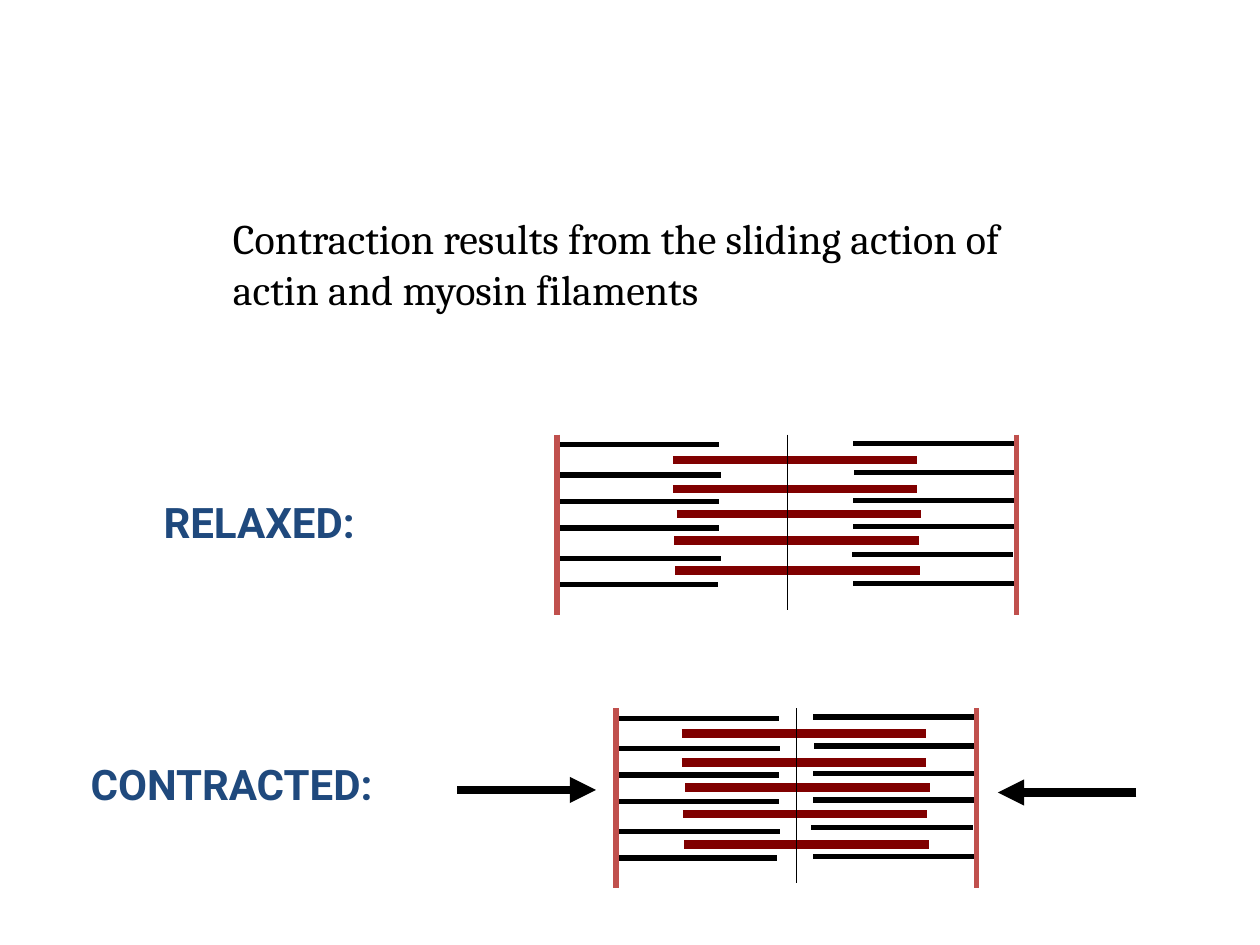
from dataclasses import dataclass

from lxml.etree import SubElement
from pptx import Presentation
from pptx.dml.color import RGBColor
from pptx.enum.shapes import MSO_CONNECTOR
from pptx.enum.text import MSO_AUTO_SIZE
from pptx.oxml.ns import qn
from pptx.util import Inches, Pt

BLACK, DISC_RED, MYOSIN_RED, NAVY = "000000", "C0504D", "800000", "1F497D"
ACTIN_LENGTH, MYOSIN_LENGTH = 1.28, 1.94
DISC_HEIGHT, MIDLINE_HEIGHT = 1.43, 1.39

# Filament offsets: (x from the disc or the midline, y from the top)
LEFT_ACTIN = [(0.01, 0.08), (0.02, 0.32), (0.01, 0.53),
              (0.01, 0.74), (0.02, 0.98), (0, 1.19)]
RIGHT_ACTIN = [(-0.02, 0.07), (-0.01, 0.3), (-0.02, 0.52),
               (-0.02, 0.73), (-0.03, 0.95), (-0.02, 1.18)]
MYOSIN = [(-0.91, 0.2), (-0.91, 0.43), (-0.88, 0.63),
          (-0.9, 0.84), (-0.89, 1.08)]


@dataclass
class Sarcomere:
    left: float
    middle: float
    right: float
    top: float


@dataclass
class Label:
    text: str
    left: float
    top: float
    width: float
    height: float
    font: str
    color: str
    bold: bool = False
    wrap: bool = False


RELAXED = Sarcomere(4.42, 6.25, 8.07, 3.45)
CONTRACTED = Sarcomere(4.89, 6.32, 7.75, 5.62)
LABELS = [
    Label("Contraction results from the sliding action of actin and myosin filaments",
          1.75, 1.64, 6.48, 0.91, "Cambria", BLACK, wrap=True),
    Label("RELAXED:", 1.2, 3.89, 1.9, 0.5, "Roboto", NAVY, bold=True),
    Label("CONTRACTED:", 0.62, 5.97, 2.65, 0.5, "Roboto", NAVY, bold=True),
]


def rgb(color: str) -> RGBColor:
    return RGBColor.from_string(color)


def add_line(s, x1: float, y1: float, x2: float, y2: float,
             color: str, width: float, arrow: bool = False) -> None:
    sp = s.shapes.add_connector(MSO_CONNECTOR.STRAIGHT, Inches(x1), Inches(y1),
                                Inches(x2), Inches(y2))
    sp.line.color.rgb = rgb(color)
    sp.line.width = Pt(width)
    if arrow:
        SubElement(sp.line._get_or_add_ln(), qn("a:tailEnd"), type="triangle")
    SubElement(sp._element.spPr, qn("a:effectLst"))


def add_label(s, label: Label) -> None:
    sp = s.shapes.add_textbox(Inches(label.left), Inches(label.top),
                              Inches(label.width), Inches(label.height))
    tf = sp.text_frame
    tf.word_wrap = label.wrap
    tf.auto_size = MSO_AUTO_SIZE.SHAPE_TO_FIT_TEXT
    tf.text = label.text
    font = tf.paragraphs[0].runs[0].font
    font.name, font.size, font.bold = label.font, Pt(24), label.bold
    font.color.rgb = rgb(label.color)


def add_sarcomere(s, sarcomere: Sarcomere) -> None:
    """Draw actin, myosin, the two end discs and the midline."""
    top = sarcomere.top
    filaments = [
        (LEFT_ACTIN, sarcomere.left, ACTIN_LENGTH, BLACK, 3),
        (RIGHT_ACTIN, sarcomere.right, -ACTIN_LENGTH, BLACK, 3),
        (MYOSIN, sarcomere.middle, MYOSIN_LENGTH, MYOSIN_RED, 5),
    ]
    for offsets, base, length, color, width in filaments:
        for dx, dy in offsets:
            x, y = base + dx, top + dy
            add_line(s, x, y, x + length, y, color, width)
    for x in (sarcomere.left, sarcomere.right):
        add_line(s, x, top, x, top + DISC_HEIGHT, DISC_RED, 3)
    add_line(s, sarcomere.middle, top, sarcomere.middle, top + MIDLINE_HEIGHT,
             BLACK, 0.75)


def main() -> None:
    prs = Presentation()
    prs.slide_width, prs.slide_height = Inches(10), Inches(7.5)
    s = prs.slides.add_slide(prs.slide_layouts[6])
    for sarcomere in (RELAXED, CONTRACTED):
        add_sarcomere(s, sarcomere)
    add_line(s, 9.02, 6.29, 7.92, 6.29, BLACK, 5, arrow=True)
    add_line(s, 3.63, 6.27, 4.73, 6.27, BLACK, 5, arrow=True)
    for label in LABELS:
        add_label(s, label)
    prs.save("out.pptx")


if __name__ == "__main__":
    main()
